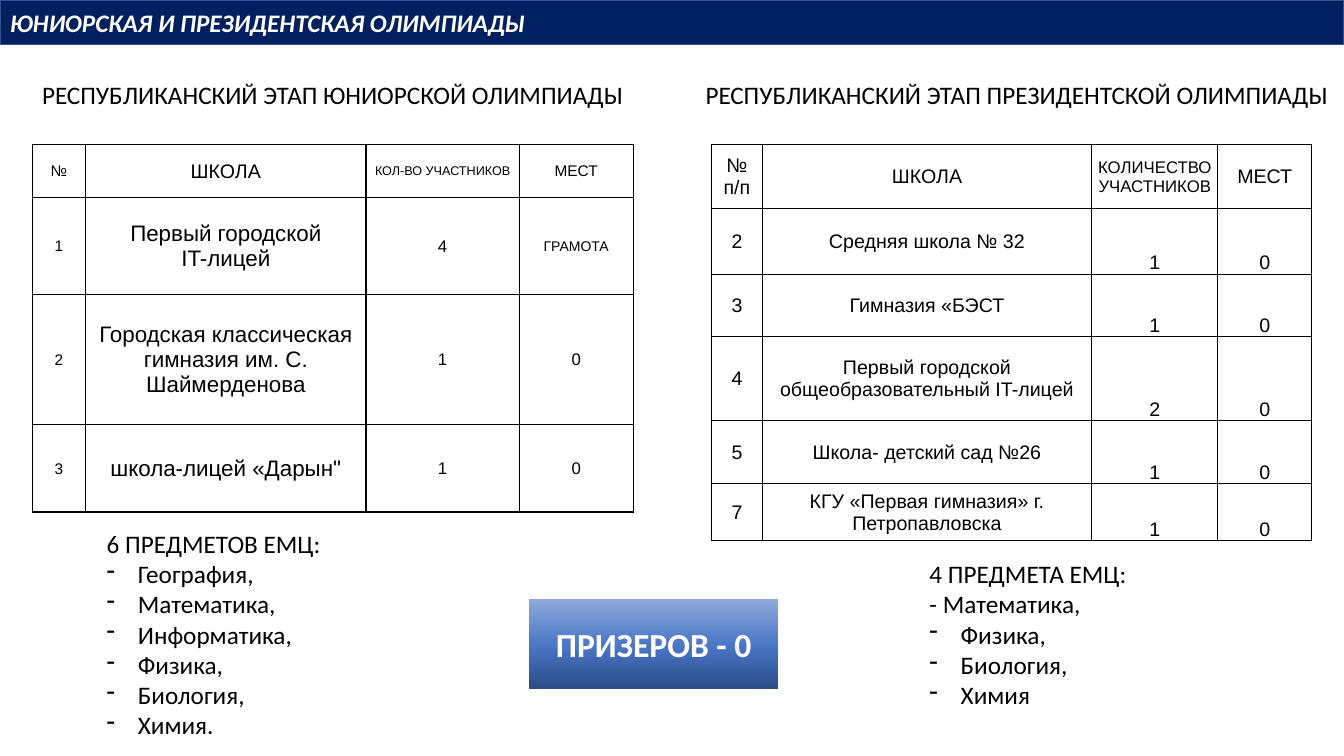
from lxml import etree
from pptx import Presentation
from pptx.dml.color import RGBColor
from pptx.enum.shapes import MSO_SHAPE
from pptx.enum.text import MSO_ANCHOR, MSO_AUTO_SIZE, PP_ALIGN
from pptx.oxml.ns import qn
from pptx.util import Inches, Pt

RECTANGLE = MSO_SHAPE.RECTANGLE
MIDDLE, BOTTOM = MSO_ANCHOR.MIDDLE, MSO_ANCHOR.BOTTOM
LEFT, CENTER = PP_ALIGN.LEFT, PP_ALIGN.CENTER
GROW = MSO_AUTO_SIZE.SHAPE_TO_FIT_TEXT

WIDTH, HEIGHT = Inches(13.33), Inches(7.5)
BLACK, WHITE, NAVY, NAVY_EDGE = "000000", "FFFFFF", "002060", "325491"
BLUE_STOPS = ((0, "2A4B86"), (48, "4A76C6"), (100, "8FAADC"))
TITLE_TOP, TITLE_HEIGHT = 9.87, 5.33
TABLE_TOP, TABLE_WIDTH = 19.07, 44.64

JUNIOR_ROWS = [
    [("№", 11), ("ШКОЛА", 14), ("КОЛ-ВО УЧАСТНИКОВ", 9), ("МЕСТ", 11)],
    [("1", 11), ("Первый городской\nIT-лицей", 16), ("4", 12), ("ГРАМОТА", 10)],
    [("2", 11), ("Городская классическая гимназия им. С. Шаймерденова", 16),
     ("1", 12), ("0", 12)],
    [("3", 11), ("школа-лицей «Дарын\"", 16), ("1", 12), ("0", 12)],
]
PRESIDENT_HEADER = [("№ п/п", 14), ("ШКОЛА", 14),
                    ("КОЛИЧЕСТВО УЧАСТНИКОВ", 12), ("МЕСТ", 14)]
PRESIDENT_SCHOOLS = [
    ("2", "Средняя школа № 32", "1", "0"),
    ("3", "Гимназия «БЭСТ", "1", "0"),
    ("4", "Первый городской общеобразовательный IT-лицей", "2", "0"),
    ("5", "Школа- детский сад №26", "1", "0"),
    ("7", "КГУ «Первая гимназия» г. Петропавловска", "1", "0"),
]


def color(code):
    return RGBColor.from_string(code)


def place(left, top, width, height):
    """Turn percentages of the slide into lengths."""
    return [round(share * side / 100) for share, side in
            ((left, WIDTH), (top, HEIGHT), (width, WIDTH), (height, HEIGHT))]


def write(frame, text, size=18, font="Calibri", ink=BLACK, bold=False,
          italic=False, align=LEFT):
    for number, line in enumerate(text.split("\n")):
        para = frame.add_paragraph() if number else frame.paragraphs[0]
        para.alignment = align
        span = para.add_run()
        span.text = line
        span.font.size = Pt(size)
        span.font.name = font
        span.font.bold = bold
        span.font.italic = italic
        span.font.color.rgb = color(ink)


def add_dash(para):
    props = para._p.get_or_add_pPr()
    props.set("marL", str(Inches(0.31)))
    props.set("indent", str(Inches(-0.31)))
    etree.SubElement(props, qn("a:buFontTx"))
    etree.SubElement(props, qn("a:buChar"), char="-")


def add_text(page, spot, text, wrap=False, dashes_from=None):
    box = page.shapes.add_textbox(*place(*spot))
    frame = box.text_frame
    frame.word_wrap = wrap
    frame.auto_size = GROW
    write(frame, text)
    if dashes_from is not None:
        for para in frame.paragraphs[dashes_from:]:
            add_dash(para)


def add_bar(page, spot, text, **style):
    bar = page.shapes.add_shape(RECTANGLE, *place(*spot))
    bar.shadow.inherit = False
    bar.text_frame.word_wrap = True
    bar.text_frame.vertical_anchor = MIDDLE
    write(bar.text_frame, text, ink=WHITE, bold=True, **style)
    return bar


def fill_gradient(shape, stops):
    """Run the stops from the bottom of the shape to its top."""
    shape.fill.gradient()
    shape.fill.gradient_angle = 90
    stop_list = shape._element.spPr.find(".//" + qn("a:gsLst"))
    for old in list(stop_list):
        stop_list.remove(old)
    for percent, code in stops:
        stop = etree.SubElement(stop_list, qn("a:gs"), pos=str(percent * 1000))
        etree.SubElement(stop, qn("a:srgbClr"), val=code)


def add_borders(cell):
    props = cell._tc.get_or_add_tcPr()
    for side in ("a:lnL", "a:lnR", "a:lnT", "a:lnB"):
        line = etree.SubElement(props, qn(side), w=str(Pt(1)))
        fill = etree.SubElement(line, qn("a:solidFill"))
        etree.SubElement(fill, qn("a:srgbClr"), val=BLACK)


def add_grid(page, left, columns, heights, rows, number_anchor=MIDDLE):
    """Columns and heights are in inches; number_anchor sets the last two columns."""
    spot = place(left, TABLE_TOP, TABLE_WIDTH, 0)
    spot[3] = Inches(sum(heights))
    table = page.shapes.add_table(len(rows), len(columns), *spot).table
    table.first_row = table.horz_banding = False
    for column, width in zip(table.columns, columns):
        column.width = Inches(width)
    for r, (height, row) in enumerate(zip(heights, rows)):
        table.rows[r].height = Inches(height)
        for c, (text, size) in enumerate(row):
            cell = table.cell(r, c)
            cell.margin_left = cell.margin_right = cell.margin_top = Inches(0.01)
            cell.margin_bottom = 0
            cell.vertical_anchor = number_anchor if r and c > 1 else MIDDLE
            add_borders(cell)
            cell.fill.background()
            write(cell.text_frame, text, size=size, font="Arial", align=CENTER)


def main():
    deck = Presentation()
    deck.slide_width, deck.slide_height = WIDTH, HEIGHT
    page = deck.slides.add_slide(deck.slide_layouts[6])

    header = add_bar(page, (0, 0, 100, 5.87),
                     "ЮНИОРСКАЯ И ПРЕЗИДЕНТСКАЯ ОЛИМПИАДЫ", italic=True)
    header.fill.solid()
    header.fill.fore_color.rgb = color(NAVY)
    header.line.color.rgb = color(NAVY_EDGE)
    header.line.width = Pt(1)

    add_text(page, (2.4, TITLE_TOP, 45.16, TITLE_HEIGHT),
             "РЕСПУБЛИКАНСКИЙ ЭТАП ЮНИОРСКОЙ ОЛИМПИАДЫ")
    add_grid(page, 2.4, (0.53, 2.78, 1.52, 1.13), (0.53, 0.96, 1.29, 0.87),
             JUNIOR_ROWS)
    add_text(page, (7.2, 69.2, 21.76, 29.6),
             "6 ПРЕДМЕТОВ ЕМЦ:\nГеография,\nМатематика,\nИнформатика,\n"
             "Физика,\nБиология,\nХимия.", wrap=True, dashes_from=1)

    add_text(page, (51.76, TITLE_TOP, 48.24, TITLE_HEIGHT),
             "РЕСПУБЛИКАНСКИЙ ЭТАП ПРЕЗИДЕНТСКОЙ ОЛИМПИАДЫ")
    schools = [[(text, 14) for text in school] for school in PRESIDENT_SCHOOLS]
    add_grid(page, 52.96, (0.5, 3.27, 1.25, 0.93),
             (0.64, 0.65, 0.62, 0.83, 0.63, 0.56),
             [PRESIDENT_HEADER] + schools, number_anchor=BOTTOM)
    add_text(page, (68.42, 73.2, 16.73, 21.6),
             "4 ПРЕДМЕТА ЕМЦ:\n- Математика,\nФизика,\nБиология,\nХимия",
             dashes_from=2)

    winners = add_bar(page, (39.38, 79.2, 18.53, 12), "ПРИЗЕРОВ - 0",
                      size=24, align=CENTER)
    fill_gradient(winners, BLUE_STOPS)
    winners.line.fill.background()

    deck.save("out.pptx")


if __name__ == "__main__":
    main()
